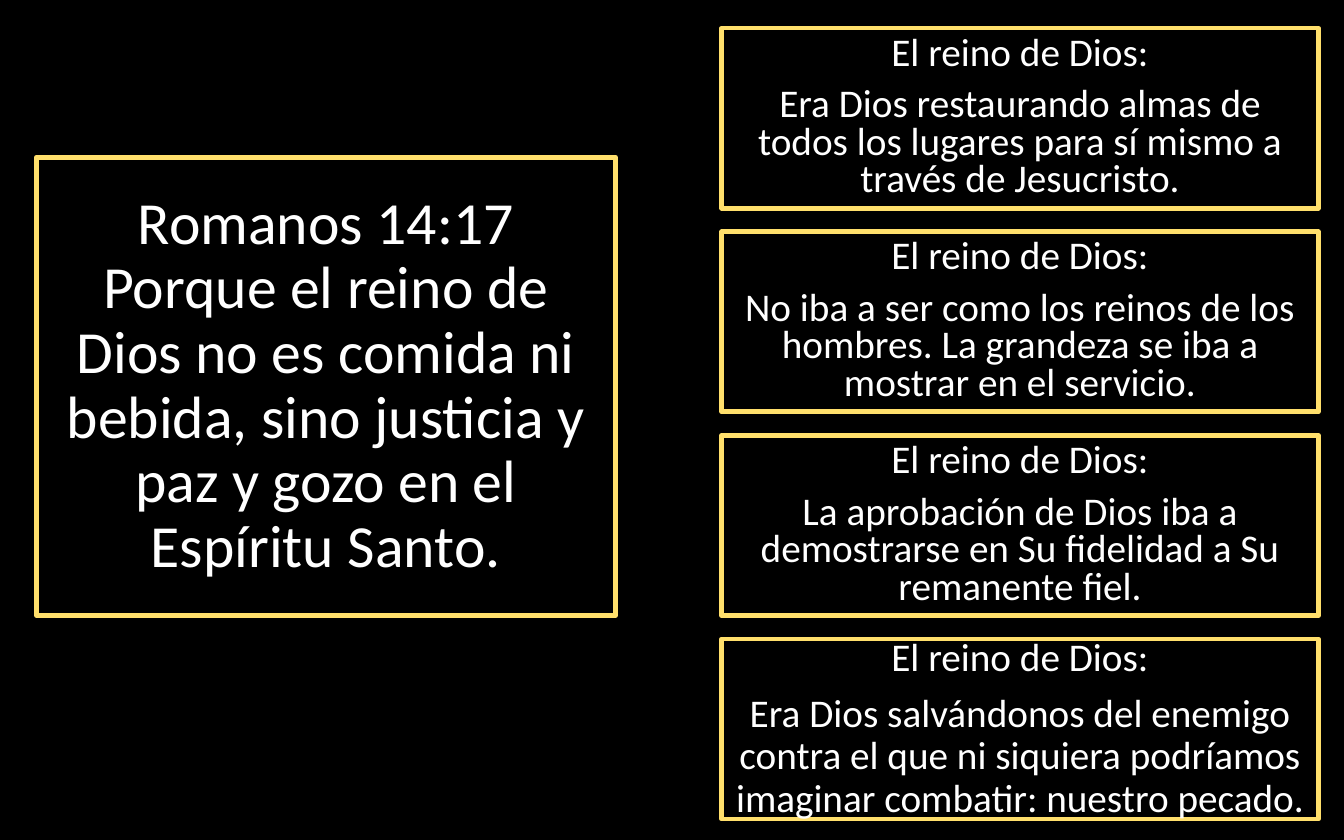
from pptx import Presentation
from pptx.dml.color import RGBColor
from pptx.enum.shapes import MSO_SHAPE
from pptx.enum.text import MSO_ANCHOR, PP_ALIGN
from pptx.util import Inches, Pt

RECTANGLE = MSO_SHAPE.RECTANGLE
MIDDLE = MSO_ANCHOR.MIDDLE
CENTER = PP_ALIGN.CENTER

# Content
VERSE = ("Romanos 14:17 Porque el reino de Dios no es comida ni bebida, "
         "sino justicia y paz y gozo en el Espíritu Santo.")
HEADING = "El reino de Dios:"
# Statement and its line spacing
STATEMENTS = [
    ("Era Dios restaurando almas de todos los lugares para sí mismo a "
     "través de Jesucristo.", 0.8),
    ("No iba a ser como los reinos de los hombres. La grandeza se iba a "
     "mostrar en el servicio.", 0.8),
    ("La aprobación de Dios iba a demostrarse en Su fidelidad a Su "
     "remanente fiel.", 0.8),
    ("Era Dios salvándonos del enemigo contra el que ni siquiera podríamos "
     "imaginar combatir: nuestro pecado.", 0.9),
]

# Layout in inches
SLIDE_WIDTH, SLIDE_HEIGHT = 10, 6.25
VERSE_AREA = (0.27, 1.17, 4.31, 3.41)
COLUMN_LEFT, COLUMN_TOP = 5.37, 0.21
CARD_WIDTH, CARD_HEIGHT = 4.44, 1.34
ROW_STEP = 1.515

# Style
BLACK, WHITE, GOLD = "000000", "FFFFFF", "FFDF6B"
FRAME_FORMAT = {"word_wrap": True, "vertical_anchor": MIDDLE}


def color(value):
    return RGBColor.from_string(value)


def apply(target, values):
    for name, value in values.items():
        setattr(target, name, value)


def add_box(slide, area, texts, size, line_spacing):
    box = slide.shapes.add_shape(RECTANGLE, *(Inches(v) for v in area))
    box.shadow.inherit = False
    box.fill.background()
    box.line.color.rgb = color(GOLD)
    box.line.width = Pt(2.5)

    frame = box.text_frame
    apply(frame, FRAME_FORMAT)
    for index, text in enumerate(texts):
        para = frame.add_paragraph() if index else frame.paragraphs[0]
        apply(para, {"alignment": CENTER, "line_spacing": line_spacing,
                     "space_before": Pt(7.5)})
        span = para.add_run()
        span.text = text
        apply(span.font, {"name": "Calibri", "size": Pt(size)})
        span.font.color.rgb = color(WHITE)


def main():
    deck = Presentation()
    deck.slide_width = Inches(SLIDE_WIDTH)
    deck.slide_height = Inches(SLIDE_HEIGHT)
    page = deck.slides.add_slide(deck.slide_layouts[6])
    page.background.fill.solid()
    page.background.fill.fore_color.rgb = color(BLACK)

    # Verse on the left
    add_box(page, VERSE_AREA, [VERSE], 32, 0.9)

    # Column of statements on the right
    for row, (statement, line_spacing) in enumerate(STATEMENTS):
        area = (COLUMN_LEFT, COLUMN_TOP + row * ROW_STEP, CARD_WIDTH, CARD_HEIGHT)
        add_box(page, area, [HEADING, statement], 21, line_spacing)

    deck.save("out.pptx")


if __name__ == "__main__":
    main()
